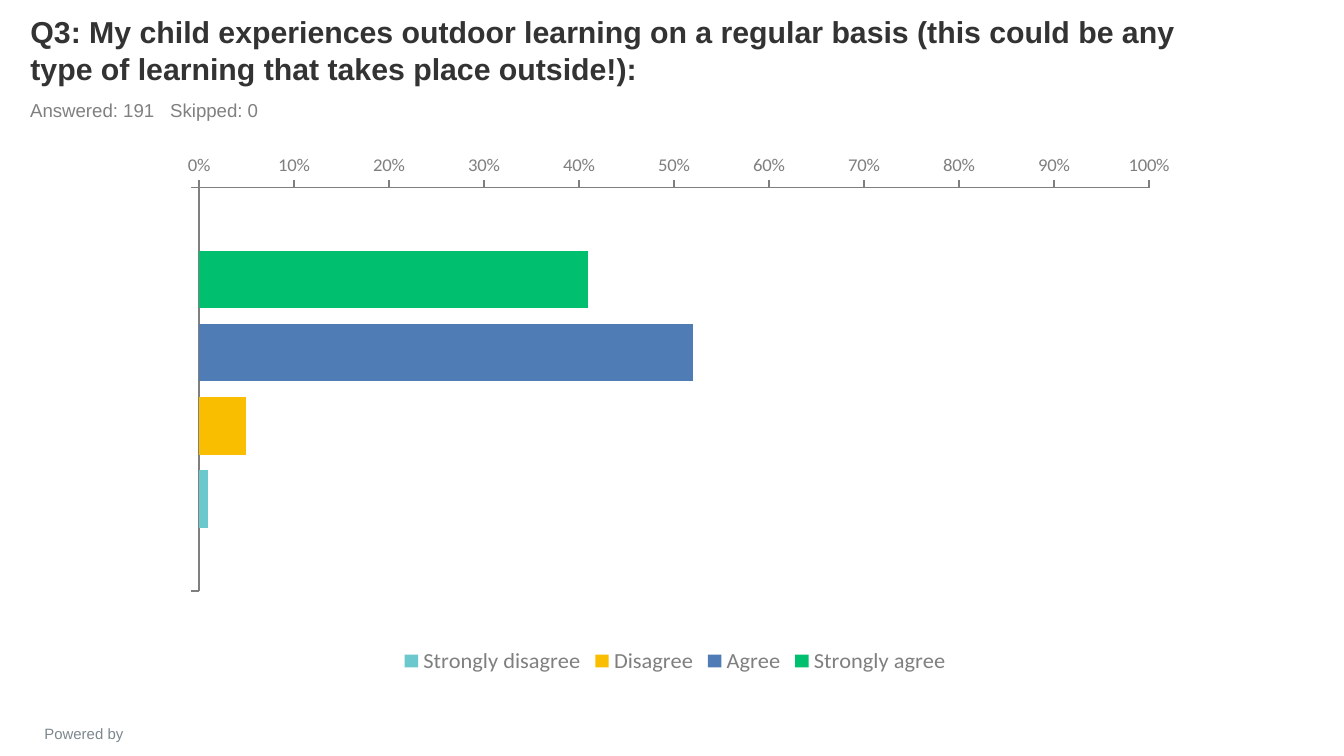
from lxml import etree
from pptx import Presentation
from pptx.chart.data import CategoryChartData
from pptx.dml.color import RGBColor
from pptx.enum.chart import (XL_AXIS_CROSSES, XL_CHART_TYPE, XL_LEGEND_POSITION,
                             XL_TICK_LABEL_POSITION, XL_TICK_MARK)
from pptx.enum.text import MSO_ANCHOR, MSO_AUTO_SIZE, PP_ALIGN
from pptx.oxml.ns import qn
from pptx.util import Pt

PX = 9144000 / 1344
BARS = XL_CHART_TYPE.BAR_CLUSTERED
AT_MAXIMUM = XL_AXIS_CROSSES.MAXIMUM
LEGEND_BOTTOM = XL_LEGEND_POSITION.BOTTOM
LABELS_LOW = XL_TICK_LABEL_POSITION.LOW
TICK_OUT, TICK_NONE = XL_TICK_MARK.OUTSIDE, XL_TICK_MARK.NONE
LEFT, CENTER = PP_ALIGN.LEFT, PP_ALIGN.CENTER
TOP, MIDDLE, BOTTOM = MSO_ANCHOR.TOP, MSO_ANCHOR.MIDDLE, MSO_ANCHOR.BOTTOM
NO_AUTOFIT = MSO_AUTO_SIZE.NONE

COLORS = {
    "title": "333333",
    "counts": "808080",
    "footer": "7C878E",
    "axis": "7F7F7F",
    "Strongly agree": "00BF6F",
    "Agree": "507CB6",
    "Disagree": "F9BE00",
    "Strongly disagree": "6BC8CD",
}
ANSWERS = {"Strongly agree": 0.41, "Agree": 0.52, "Disagree": 0.05, "Strongly disagree": 0.01}


def px(*lengths):
    return [round(length * PX) for length in lengths]


def write(box, place, text, size, color, anchor, align=LEFT, bold=False):
    box.left, box.top, box.width, box.height = px(*place)
    frame = box.text_frame
    frame.word_wrap = True
    frame.auto_size = NO_AUTOFIT
    frame.vertical_anchor = anchor
    paragraph = frame.paragraphs[0]
    paragraph.alignment = align
    run = paragraph.add_run()
    run.text = text
    run.font.name = "Arial"
    run.font.size = Pt(size)
    run.font.bold = bold
    run.font.color.rgb = RGBColor.from_string(COLORS[color])
    return paragraph


prs = Presentation()
prs.slide_width, prs.slide_height = px(1344, 756)
slide = prs.slides.add_slide(prs.slide_layouts[5])

write(slide.shapes.title, (17, 12, 1210, 81),
      "Q3: My child experiences outdoor learning on a regular basis "
      "(this could be any type of learning that takes place outside!):",
      16.2, "title", BOTTOM, bold=True)

counts_box = slide.shapes.add_textbox(*px(17, 93, 1210, 35))
counts = write(counts_box, (17, 93, 1210, 35), "Answered: 191\tSkipped: 0", 10, "counts", MIDDLE)
tab_stops = etree.SubElement(counts._p.get_or_add_pPr(), qn("a:tabLst"))
etree.SubElement(tab_stops, qn("a:tab"), pos=str(px(140)[0]), algn="l")

footer = slide.shapes.add_textbox(*px(7, 718, 154, 24))
write(footer, (7, 718, 154, 24), "Powered by", 8, "footer", TOP, CENTER)

answer_data = CategoryChartData(number_format="0%")
answer_data.categories = [" "]
for answer, share in ANSWERS.items():
    answer_data.add_series(answer, [share])
chart = slide.shapes.add_chart(BARS, *px(161, 155, 1028, 524), answer_data).chart
chart.has_title = False
chart.font.name = "Calibri"
chart.font.size = Pt(18)
chart.font.color.rgb = RGBColor.from_string(COLORS["title"])

bars = chart.plots[0]
bars.gap_width = 219
bars.overlap = -27
bars.vary_by_categories = False
for series in bars.series:
    series.format.fill.solid()
    series.format.fill.fore_color.rgb = RGBColor.from_string(COLORS[series.name])

answer_axis, share_axis = chart.category_axis, chart.value_axis
for axis in (answer_axis, share_axis):
    axis.has_major_gridlines = False
    axis.major_tick_mark = TICK_OUT
    axis.minor_tick_mark = TICK_NONE
    axis.tick_labels.font.size = Pt(10)
    axis.tick_labels.font.color.rgb = RGBColor.from_string(COLORS["axis"])
    axis.format.line.width = Pt(0.75)
    axis.format.line.color.rgb = RGBColor.from_string(COLORS["axis"])
answer_axis.reverse_order = True
answer_axis.crosses = AT_MAXIMUM
answer_axis.tick_label_position = LABELS_LOW
share_axis.minimum_scale = 0
share_axis.maximum_scale = 1
share_axis.major_unit = 0.1
share_axis.tick_labels.number_format = "0%"
share_axis.tick_labels.number_format_is_linked = False

chart.has_legend = True
chart.legend.position = LEGEND_BOTTOM
chart.legend.include_in_layout = False
chart.legend.font.size = Pt(12)
chart.legend.font.color.rgb = RGBColor.from_string(COLORS["axis"])

plot_area = chart._chartSpace.find(".//" + qn("c:plotArea"))
for old_layout in plot_area.findall(qn("c:layout")):
    plot_area.remove(old_layout)
layout = etree.Element(qn("c:layout"))
plot_area.insert(0, layout)
manual = etree.SubElement(layout, qn("c:manualLayout"))
for tag, value in (("layoutTarget", "inner"), ("xMode", "edge"), ("yMode", "edge"),
                   ("x", 38 / 1028), ("y", 10 / 524), ("w", 950 / 1028), ("h", 422 / 524)):
    etree.SubElement(manual, qn("c:" + tag), val=str(value))

prs.save("out.pptx")
